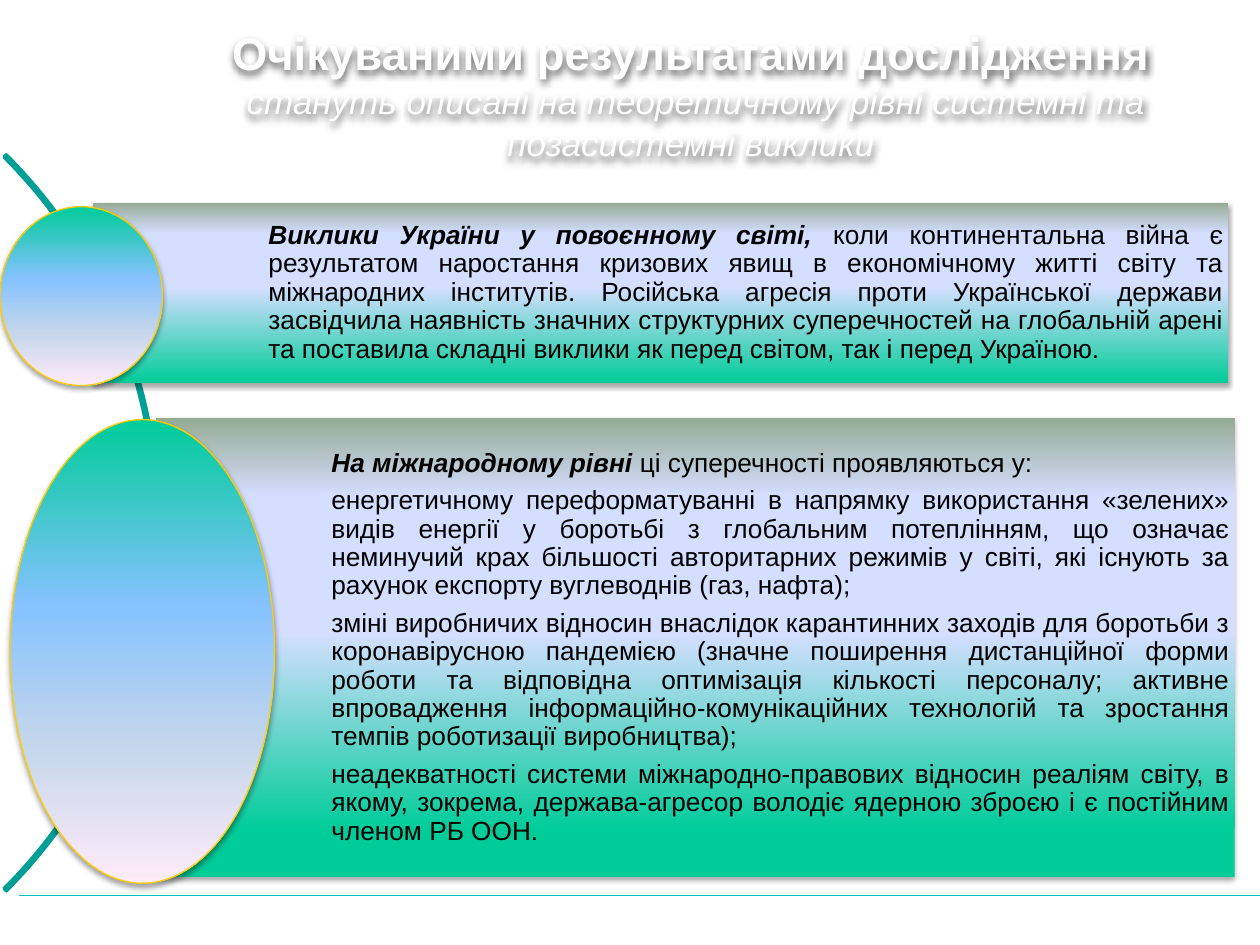
import pptx
import pptx.util
import pptx.oxml
import pptx.oxml.ns
import pptx.dml.color
import pptx.enum.shapes
import pptx.enum.text

Pt = pptx.util.Pt
Kind = pptx.enum.shapes.MSO_SHAPE
Align = pptx.enum.text.PP_ALIGN
Anchor = pptx.enum.text.MSO_ANCHOR

COLORS = {
    "white": "FFFFFF", "black": "000000", "rule": "00C2B7", "arc": "009F96",
    "gold": "FFCC00", "green": "00CC99", "pale": "D4DEFF", "sage": "96AB94",
    "blue": "85C2FF", "mist": "C4D6EB", "pink": "FFEBFA",
}
BALL = [(0, "green"), (40, "blue"), (70, "mist"), (100, "pink")]

TITLE = [[
    ("Очікуваними результатами дослідження\v", 26, True, False),
    (" стануть описані на теоретичному рівні системні та позасистемні виклики", 20, False, True),
]]
WORLD = [[
    ("Виклики України у повоєнному світі, ", 15, True, True),
    ("коли континентальна війна є результатом наростання кризових явищ в економічному "
     "житті світу та міжнародних інститутів. Російська агресія проти Української держави "
     "засвідчила наявність значних структурних суперечностей на глобальній арені та "
     "поставила складні виклики як перед світом, так і перед Україною.", 15, False, False),
]]
POINTS = [
    "енергетичному переформатуванні в напрямку використання «зелених» видів енергії у "
    "боротьбі з глобальним потеплінням, що означає неминучий крах більшості авторитарних "
    "режимів у світі, які існують за рахунок експорту вуглеводнів (газ, нафта);",
    "зміні виробничих відносин внаслідок карантинних заходів для боротьби з коронавірусною "
    "пандемією (значне поширення дистанційної форми роботи та відповідна оптимізація "
    "кількості персоналу; активне впровадження інформаційно-комунікаційних технологій та "
    "зростання темпів роботизації виробництва);",
    "неадекватності системи міжнародно-правових відносин реаліям світу, в якому, зокрема, "
    "держава-агресор володіє ядерною зброєю і є постійним членом РБ ООН.",
]
LEVEL = [[
    ("На міжнародному рівні ", 15, True, True),
    ("ці суперечності проявляються у:", 15, False, False),
]] + [[(point, 15, False, False)] for point in POINTS]


class Deck:
    font = "Arial"
    cols, rows = 100, 75

    def __init__(self):
        self.file = pptx.Presentation()
        self.file.slide_width = pptx.util.Inches(10)
        self.file.slide_height = pptx.util.Inches(7.5)
        self.slide = self.file.slides.add_slide(self.file.slide_layouts[6])

    def x(self, col):
        return round(self.file.slide_width * col / self.cols)

    def y(self, row):
        return round(self.file.slide_height * row / self.rows)

    def place(self, col, row, wide, high):
        return self.x(col), self.y(row), self.x(wide), self.y(high)

    def color(self, name):
        return pptx.dml.color.RGBColor.from_string(COLORS[name])

    def stroke(self, line, name, width):
        line.color.rgb = self.color(name)
        line.width = Pt(width)

    def shade(self, shape, blur=3.1, gap=1.8, alpha=35):
        shape.shadow.inherit = False
        effect = shape._element.spPr.find(pptx.oxml.ns.qn("a:effectLst"))
        effect.append(pptx.oxml.parse_xml(
            f'<a:outerShdw {pptx.oxml.ns.nsdecls("a")} blurRad="{Pt(blur)}" dist="{Pt(gap)}" '
            f'dir="5400000" rotWithShape="0"><a:srgbClr val="{COLORS["black"]}">'
            f'<a:alpha val="{alpha * 1000}"/></a:srgbClr></a:outerShdw>'))

    def blend(self, shape, stops, angle):
        shape.fill.gradient()
        grad = shape._element.spPr.find(pptx.oxml.ns.qn("a:gradFill"))
        marks = "".join(f'<a:gs pos="{at * 1000}"><a:srgbClr val="{COLORS[name]}"/></a:gs>'
                        for at, name in stops)
        grad.getparent().replace(grad, pptx.oxml.parse_xml(
            f'<a:gradFill {pptx.oxml.ns.nsdecls("a")} rotWithShape="1"><a:gsLst>{marks}</a:gsLst>'
            f'<a:lin ang="{angle * 60000}" scaled="0"/></a:gradFill>'))

    def prose(self, frame, texts, color, align, after=0, lead=1.0):
        frame.word_wrap = True
        for num, parts in enumerate(texts):
            para = frame.paragraphs[0] if num == 0 else frame.add_paragraph()
            para.alignment = align
            para.line_spacing = lead
            para.space_after = Pt(after)
            para.font.name = self.font
            para.font.color.rgb = self.color(color)
            for text, size, bold, slant in parts:
                run = para.add_run()
                run.text = text.rstrip("\v")
                run.font.size, run.font.bold, run.font.italic = Pt(size), bold, slant
                if text.endswith("\v"):
                    para.add_line_break()

    def title(self, texts, *spot):
        box = self.slide.shapes.add_textbox(*self.place(*spot))
        box.fill.background()
        box.text_frame.vertical_anchor = Anchor.BOTTOM
        self.prose(box.text_frame, texts, "white", Align.CENTER)
        self.shade(box, 4, 2, 60)

    def rule(self, left, right, row):
        line = self.slide.shapes.add_connector(
            pptx.enum.shapes.MSO_CONNECTOR.STRAIGHT,
            self.x(left), self.y(row), self.x(right), self.y(row))
        self.stroke(line.line, "rule", 0.75)
        line._element.spPr.append(pptx.oxml.parse_xml(
            f'<a:effectLst {pptx.oxml.ns.nsdecls("a")}/>'))

    def arc(self, *spot):
        arc = self.slide.shapes.add_shape(Kind.BLOCK_ARC, *self.place(*spot))
        arc.shadow.inherit = False
        arc.fill.background()
        self.stroke(arc.line, "arc", 2)
        for num, value in enumerate((189, 27, 0.003)):
            arc.adjustments[num] = value

    def panel(self, texts, base, *spot):
        panel = self.slide.shapes.add_shape(Kind.RECTANGLE, *self.place(*spot))
        stops = [(base, "green"), (53, "pale"), (83, "pale"), (100, "sage")]
        self.blend(panel, stops, 270)
        panel.line.fill.background()
        self.shade(panel)
        frame = panel.text_frame
        frame.vertical_anchor = Anchor.MIDDLE
        frame.margin_left = self.x(13.9)
        frame.margin_right = frame.margin_top = frame.margin_bottom = self.x(0.4)
        self.prose(frame, texts, "black", Align.JUSTIFY, 5.25, 0.9)

    def ball(self, *spot):
        ball = self.slide.shapes.add_shape(Kind.OVAL, *self.place(*spot))
        self.blend(ball, BALL, 90)
        self.stroke(ball.line, "gold", 0.75)
        self.shade(ball)


def main():
    deck = Deck()
    deck.rule(1.5, 100, 71.1)
    deck.title(TITLE, 14.6, 0.7, 80.5, 12.8)
    deck.arc(-70, 0.2, 82.6, 82.6)
    deck.panel(WORLD, 0, 7.4, 16.1, 90.1, 14.3)
    deck.ball(0, 16.4, 12.9, 14.2)
    deck.panel(LEVEL, 10, 12.4, 33.2, 85.6, 36.4)
    deck.ball(0.8, 33.3, 21, 36.8)
    deck.file.save("out.pptx")


if __name__ == "__main__":
    main()
